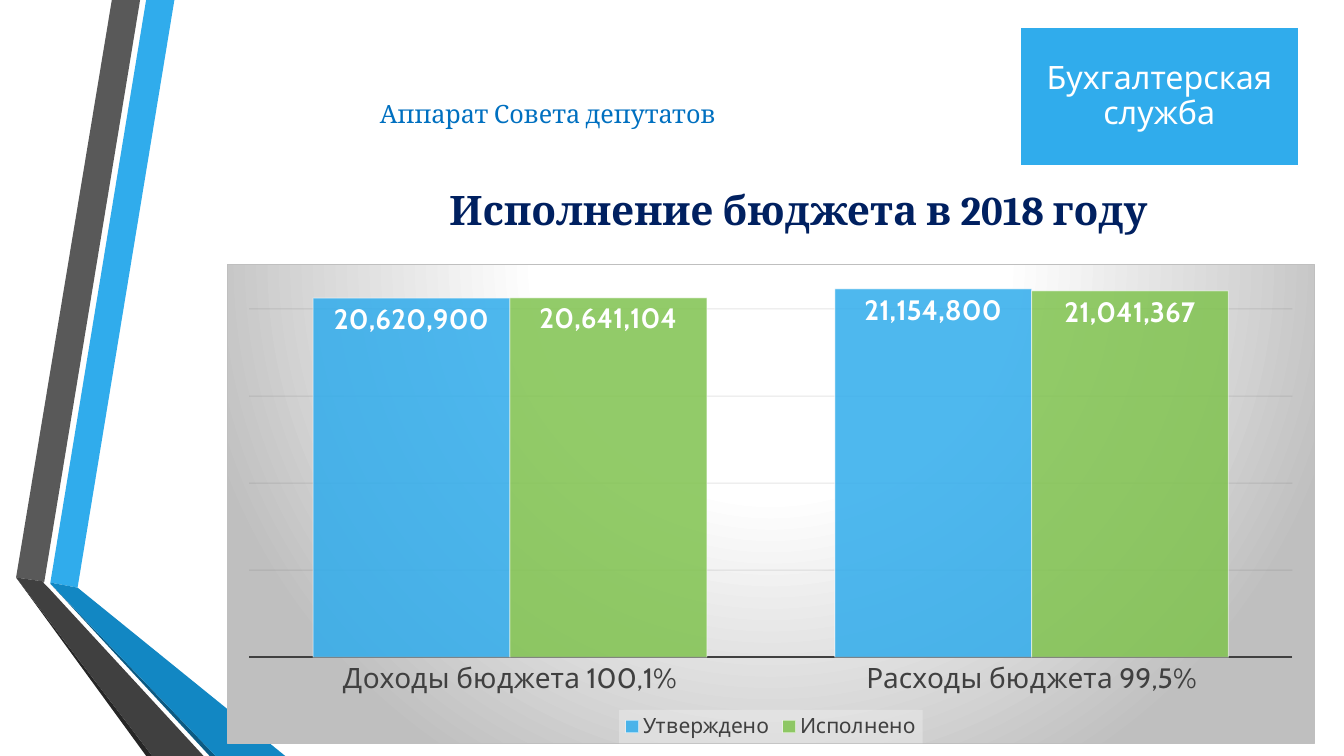
import pptx
import pptx.util
import pptx.oxml
import pptx.oxml.ns
import pptx.chart.data
import pptx.dml.color
import pptx.enum.chart
import pptx.enum.shapes
import pptx.enum.text

PX = 9144
RGB = pptx.dml.color.RGBColor
WHITE = RGB(0xFF, 0xFF, 0xFF)
SKY = RGB(0x30, 0xAC, 0xEC)
GREEN = RGB(0x80, 0xC3, 0x4F)
BLUE = RGB(0x00, 0x70, 0xC0)
NAVY = RGB(0x00, 0x20, 0x60)
INK = RGB(0x40, 0x40, 0x40)
BLACK = RGB(0x00, 0x00, 0x00)
GRID = RGB(0x0D, 0x0D, 0x0D)
CENTER = pptx.enum.text.PP_ALIGN.CENTER

RIBBONS = [
    (SKY, [(50, 578), (77, 583), (173, 0), (145, 0)]),
    (RGB(0x59, 0x59, 0x59), [(139, 0), (111, 0), (16, 573), (44, 577)]),
    (RGB(0x26, 0x26, 0x26), [(16, 573), (145, 750), (151, 750)]),
    (RGB(0x0C, 0x5A, 0x82), [(50, 579), (208, 750), (214, 750)]),
    (RGB(0x12, 0x87, 0xC3), [(50, 579), (214, 750), (283, 750), (77, 583), (50, 578)]),
    (INK, [(202, 750), (48, 583), (43, 578), (44, 577), (16, 573), (151, 750)]),
]
CATEGORIES = ["Доходы бюджета 100,1%", "Расходы бюджета 99,5%"]
SERIES = [
    ("Утверждено", (20620900, 21154800), SKY),
    ("Исполнено", (20641104, 21041367), GREEN),
]
CHART_FILL = """
<a:gradFill><a:gsLst>
<a:gs pos="0"><a:srgbClr val="FFFFFF"/></a:gs>
<a:gs pos="39000"><a:srgbClr val="FFFFFF"/></a:gs>
<a:gs pos="100000"><a:srgbClr val="BFBFBF"/></a:gs></a:gsLst>
<a:path path="circle"><a:fillToRect l="50000" t="-80000" r="50000" b="180000"/></a:path>
</a:gradFill>
<a:ln w="9525"><a:solidFill><a:srgbClr val="BFBFBF"/></a:solidFill></a:ln>"""
LEGEND_FILL = """
<a:solidFill><a:srgbClr val="F2F2F2"><a:alpha val="39000"/></a:srgbClr></a:solidFill>
<a:ln><a:noFill/></a:ln>"""
PLOT_LAYOUT = """
<c:manualLayout><c:layoutTarget val="inner"/><c:xMode val="edge"/><c:yMode val="edge"/>
<c:x val="0.02"/><c:y val="0.02"/><c:w val="0.96"/><c:h val="0.8"/></c:manualLayout>"""


def box(*lengths):
    return [v * PX for v in lengths]


def chart_xml(tag, body):
    ns = pptx.oxml.ns.nsdecls("c", "a")
    return pptx.oxml.parse_xml(f"<c:{tag} {ns}>{body}</c:{tag}>")


def set_font(font, size, color, name="Cabin", bold=False):
    font.size = pptx.util.Pt(size)
    font.name = name
    font.bold = bold
    font.color.rgb = color


def set_line(line, color, width):
    line.color.rgb = color
    line.width = pptx.util.Pt(width)


def set_alpha(element, query, percent):
    for clr in element.xpath(query):
        alpha = clr.makeelement(pptx.oxml.ns.qn("a:alpha"), {"val": str(percent * 1000)})
        clr.append(alpha)


def add_text(p, text, size, color, name="Cabin", bold=False, align=None, before=0):
    p.alignment = align
    p.line_spacing = 0.9
    if before:
        p.space_before = pptx.util.Pt(before)
    r = p.add_run()
    r.text = text
    set_font(r.font, size, color, name, bold)


def add_ribbon(s, color, points):
    fb = s.shapes.build_freeform(*points[0], scale=PX)
    fb.add_line_segments(points[1:], close=True)
    sp = fb.convert_to_shape()
    sp.shadow.inherit = False
    sp.fill.solid()
    sp.fill.fore_color.rgb = color
    sp.line.fill.background()


def add_heading(s):
    tf = s.shapes.add_textbox(*box(367, 96, 850, 199)).text_frame
    tf.word_wrap = True
    add_text(tf.paragraphs[0], "Аппарат Совета депутатов", 18, BLUE, name="Cambria")
    add_text(tf.add_paragraph(), "Исполнение бюджета в 2018 году", 29, NAVY,
             name="Cambria", bold=True, align=CENTER, before=44)


def add_badge(s, text):
    rect = pptx.enum.shapes.MSO_SHAPE.RECTANGLE
    sp = s.shapes.add_shape(rect, *box(1012, 27, 276, 138))
    sp.shadow.inherit = False
    sp.fill.solid()
    sp.fill.fore_color.rgb = SKY
    set_line(sp.line, WHITE, 1.25)
    tf = sp.text_frame
    tf.word_wrap = True
    tf.vertical_anchor = pptx.enum.text.MSO_ANCHOR.MIDDLE
    add_text(tf.paragraphs[0], text, 23, WHITE, align=CENTER)


def format_axes(chart):
    cat, val = chart.category_axis, chart.value_axis
    cat.major_tick_mark = pptx.enum.chart.XL_TICK_MARK.NONE
    set_font(cat.tick_labels.font, 20, INK)
    set_line(cat.format.line, INK, 1.5)
    val.minimum_scale = 0
    val.maximum_scale = 22000000
    val.major_unit = 5000000
    val.tick_labels.number_format = "#,##0"
    val.tick_labels.number_format_is_linked = False
    set_line(val.major_gridlines.format.line, GRID, 0.75)
    set_alpha(val._element, "c:majorGridlines//a:srgbClr", 10)
    val.visible = False


def format_series(series, color):
    series.format.fill.solid()
    series.format.fill.fore_color.rgb = color
    set_line(series.format.line, WHITE, 0.75)
    set_alpha(series._element, "c:spPr/a:solidFill/a:srgbClr", 85)
    set_alpha(series._element, "c:spPr/a:ln//a:srgbClr", 50)
    labels = series.data_labels
    labels.show_value = True
    labels.position = pptx.enum.chart.XL_LABEL_POSITION.INSIDE_END
    labels.number_format = "#,##0"
    labels.number_format_is_linked = False
    set_font(labels.font, 20, WHITE, bold=True)


def format_legend(chart):
    chart.has_legend = True
    legend = chart.legend
    legend.position = pptx.enum.chart.XL_LEGEND_POSITION.BOTTOM
    legend.include_in_layout = False
    set_font(legend.font, 15, INK)
    legend._element.xpath("c:txPr")[0].addprevious(chart_xml("spPr", LEGEND_FILL))


def add_budget_chart(s):
    data = pptx.chart.data.CategoryChartData(number_format="#,##0")
    data.categories = CATEGORIES
    for name, values, _ in SERIES:
        data.add_series(name, values)
    kind = pptx.enum.chart.XL_CHART_TYPE.COLUMN_CLUSTERED
    chart = s.shapes.add_chart(kind, *box(225, 262, 1079, 476), data).chart
    chart.has_title = False
    set_font(chart.font, 10, BLACK)
    format_axes(chart)
    format_legend(chart)
    plot = chart.plots[0]
    plot.vary_by_categories = False
    plot.gap_width = 65
    plot.overlap = 0
    for series, (_, _, color) in zip(plot.series, SERIES):
        format_series(series, color)
    root = chart._chartSpace
    root.xpath("c:txPr")[0].addprevious(chart_xml("spPr", CHART_FILL))
    area = root.xpath("c:chart/c:plotArea")[0]
    for old in area.xpath("c:layout"):
        area.remove(old)
    area.insert(0, chart_xml("layout", PLOT_LAYOUT))


def main():
    prs = pptx.Presentation()
    prs.slide_width, prs.slide_height = box(1333, 750)
    s = prs.slides.add_slide(prs.slide_layouts[6])
    for color, points in RIBBONS:
        add_ribbon(s, color, points)
    add_heading(s)
    add_badge(s, "Бухгалтерская служба")
    add_budget_chart(s)
    prs.save("out.pptx")


if __name__ == "__main__":
    main()
